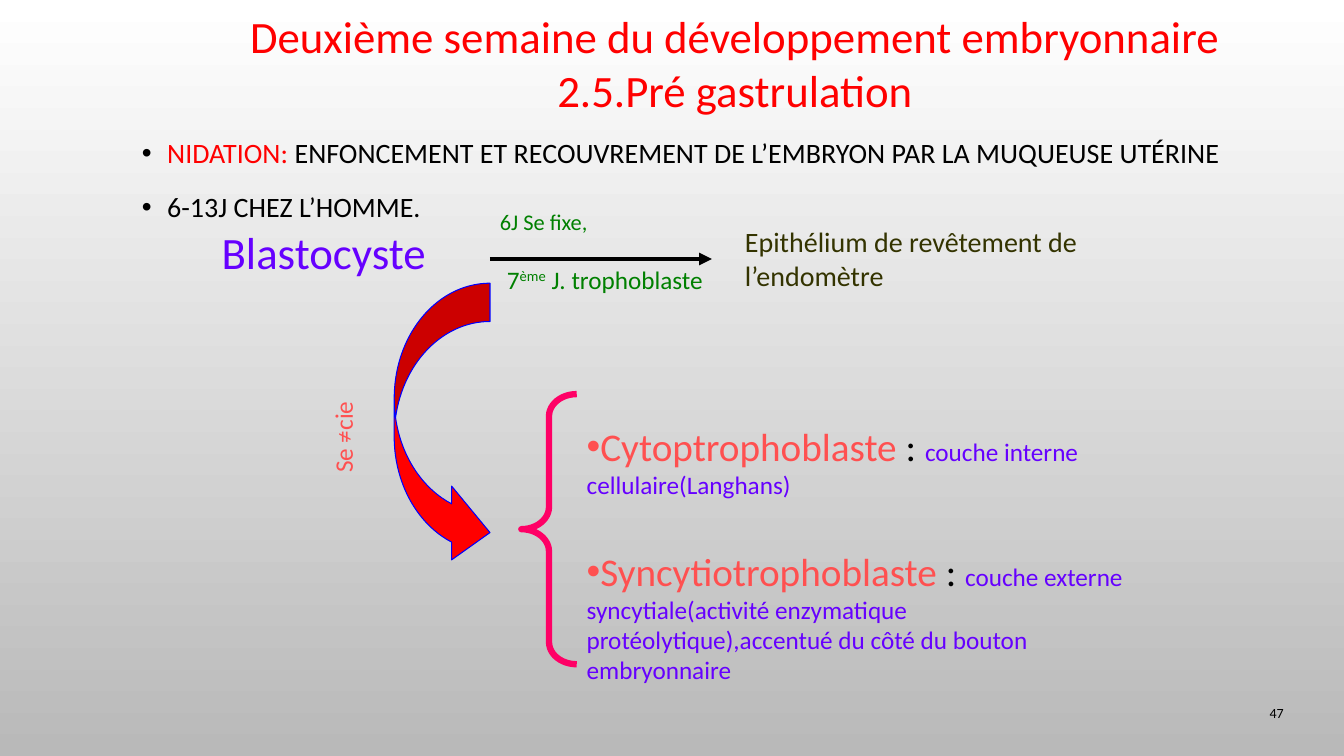
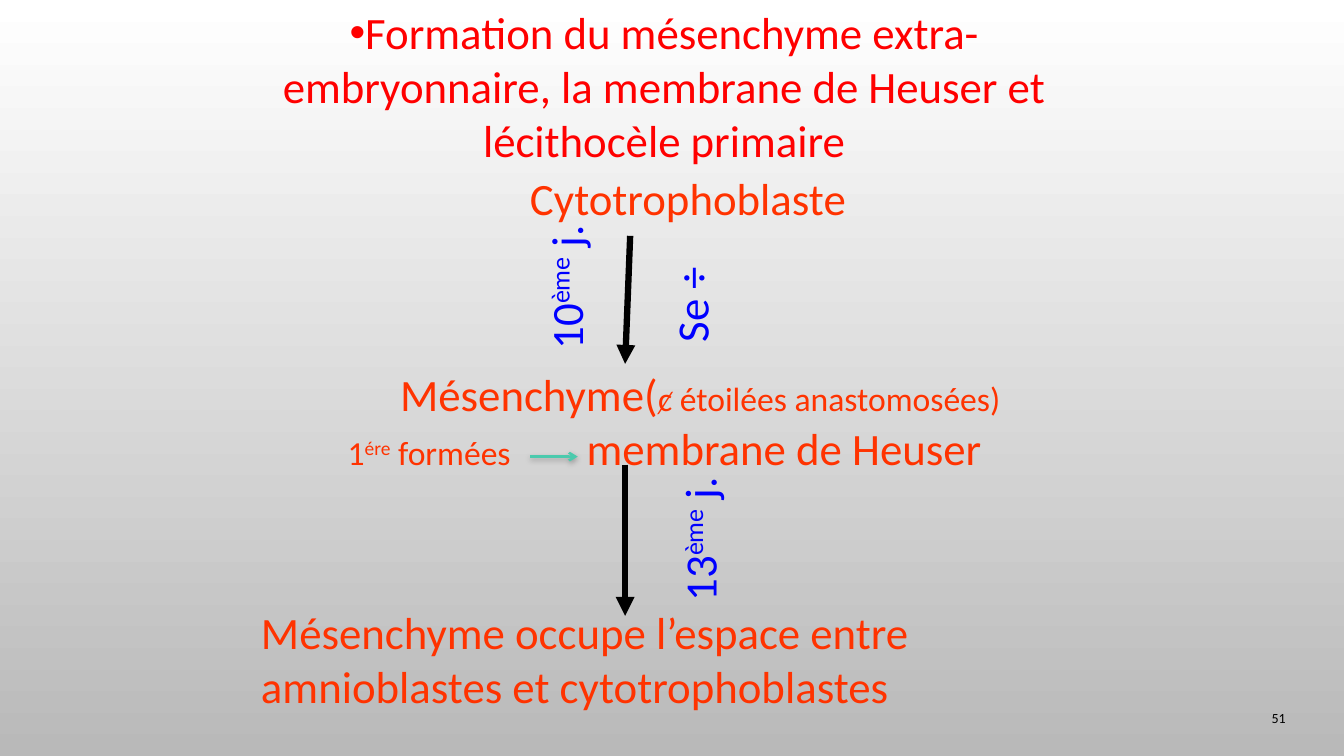
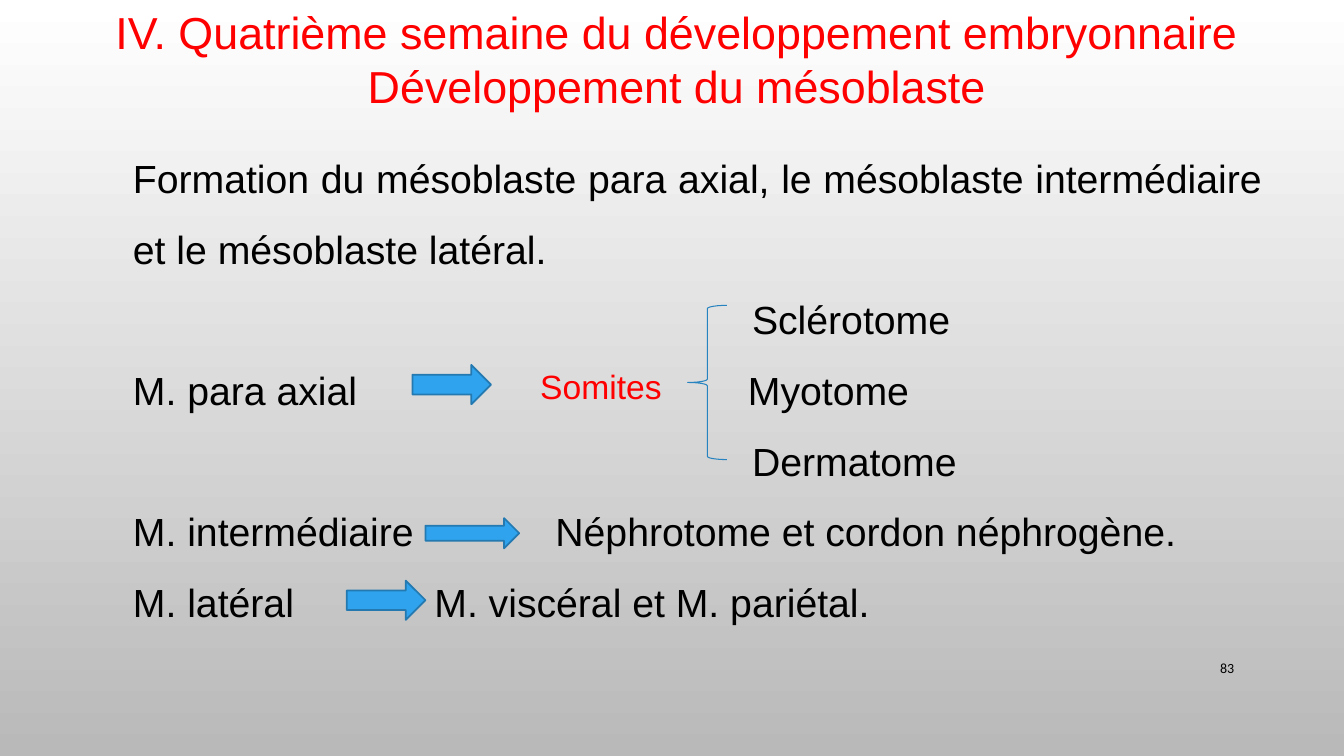
"""Build three slides on early embryonic development."""
from lxml.etree import SubElement
from pptx import Presentation
from pptx.dml.color import RGBColor
from pptx.enum.shapes import MSO_CONNECTOR, MSO_SHAPE as SHAPE
from pptx.enum.text import MSO_ANCHOR as ANCHOR, PP_ALIGN as ALIGN
from pptx.oxml.ns import qn
from pptx.util import Inches, Pt

COLORS = {
    "white": "FFFFFF", "gray": "B9B9B9", "black": "000000", "red": "FF0000",
    "violet": "6600FF", "green": "008000", "olive": "333300", "coral": "FF5050",
    "orange": "FF3300", "blue": "0000FF", "pink": "FF0066", "teal": "4BCAAD",
    "sky": "2FA3EE", "steel": "2379B0", "brace": "2683BF",
}
TITLE = (32, "red")
FLOW = (32, "orange")
FLOW_SMALL = (24, "orange")
DAY = (32, "blue")
TROPHO = (18, "green")
LAYER = (28, "coral")
LAYER_NOTE = (18, "violet")
BODY = (28, "black")
SUPER = 30000

NIDATION = [
    [("NIDATION: ", 20, "red"),
     ("ENFONCEMENT ET RECOUVREMENT DE L’EMBRYON PAR LA MUQUEUSE UTÉRINE", 20, "black")],
    [("6-13J CHEZ L’HOMME.", 20, "black")],
]
LAYERS = [
    [("Cytoptrophoblaste", *LAYER), (" : ", *BODY),
     ("couche interne cellulaire(Langhans)", *LAYER_NOTE)],
    [("Syncytiotrophoblaste", *LAYER), (" : ", *BODY),
     ("couche externe", *LAYER_NOTE), (" ", 28, "violet"),
     ("syncytiale(activité enzymatique protéolytique),accentué du côté du bouton embryonnaire",
      *LAYER_NOTE)],
]
MESENCHYME = [
    ([("\tMésenchyme(", *FLOW), ("ȼ étoilées anastomosées)", *FLOW_SMALL)], [1.34]),
    ([("\t1", *FLOW_SMALL), ("ére", *FLOW_SMALL, SUPER), (" formées", *FLOW_SMALL),
      ("\tmembrane de Heuser", *FLOW)], [0.82, 3.19]),
]
MESOBLAST_INTRO = ("Formation du mésoblaste para axial, le mésoblaste intermédiaire "
                   "et le mésoblaste latéral.")
MESOBLAST_ROWS = [
    ("", "Sclérotome", 6.14),
    ("M. para axial", "Myotome", 6.1),
    ("", "Dermatome", 6.14),
    ("M. intermédiaire", "Néphrotome et cordon néphrogène.", 4.19),
    ("M. latéral", "M. viscéral et M. pariétal.", 2.99),
]
DAYS = [
    ((5.63, 2.52, 2.44, 1), [("Se ÷", *DAY)]),
    ((4.79, 2.35, 1.63, 1), [("10", *DAY), ("ème", *DAY, SUPER), (" j.", *DAY)]),
    ((6.11, 4.85, 1.64, 1), [("13", *DAY), ("ème", *DAY, SUPER), (" j.", *DAY)]),
]
BLOCK_ARROWS = [(4.09, 3.62, 0.78, 0.39), (4.22, 5.14, 0.93, 0.3), (3.44, 5.76, 0.78, 0.39)]


def rgb(name):
    return RGBColor.from_string(COLORS[name])


def inches(values):
    return [Inches(v) for v in values]


def add_text(s, at, paras, font="Calibri", align=ALIGN.LEFT, anchor=ANCHOR.TOP,
             wrap=True, rotation=0):
    tb = s.shapes.add_textbox(*inches(at))
    tb.rotation = rotation
    tf = tb.text_frame
    tf.word_wrap = wrap
    tf.vertical_anchor = anchor
    for i, runs in enumerate(paras):
        p = tf.paragraphs[0] if i == 0 else tf.add_paragraph()
        p.alignment = align
        for text, size, color, *baseline in runs:
            r = p.add_run()
            r.text = text
            r.font.size, r.font.name = Pt(size), font
            r.font.color.rgb = rgb(color)
            if baseline:
                r._r.get_or_add_rPr().set("baseline", str(baseline[0]))
    return tf


def add_bullet(p, indent=0, color=None):
    pPr = p._p.get_or_add_pPr()
    pPr.set("marL", str(Inches(indent)))
    pPr.set("indent", str(-Inches(indent)))
    if color:
        SubElement(SubElement(pPr, qn("a:buClr")), qn("a:srgbClr"), val=COLORS[color])
    SubElement(pPr, qn("a:buFont"), typeface="Arial")
    SubElement(pPr, qn("a:buChar"), char="•")


def add_tabs(p, stops):
    tabs = SubElement(p._p.get_or_add_pPr(), qn("a:tabLst"))
    for stop in stops:
        SubElement(tabs, qn("a:tab"), pos=str(Inches(stop)), algn="l")


def add_arrow(s, start, end, color, width, head="triangle", shadow=False):
    line = s.shapes.add_connector(MSO_CONNECTOR.STRAIGHT, *inches(start + end))
    line.line.color.rgb = rgb(color)
    line.line.width = Pt(width)
    SubElement(line.line._get_or_add_ln(), qn("a:tailEnd"), type=head)
    effects = SubElement(line._element.spPr, qn("a:effectLst"))
    if shadow:
        outer = SubElement(effects, qn("a:outerShdw"), blurRad=str(Pt(4)), dist=str(Pt(2)),
                           dir="5400000", rotWithShape="0")
        tint = SubElement(outer, qn("a:srgbClr"), val=COLORS["black"])
        SubElement(tint, qn("a:alpha"), val="28000")


def add_figure(s, kind, at, line, width, fill=None, adjustments=()):
    sp = s.shapes.add_shape(kind, *inches(at))
    sp.shadow.inherit = False
    for i, value in enumerate(adjustments):
        sp.adjustments[i] = value
    if fill:
        sp.fill.solid()
        sp.fill.fore_color.rgb = rgb(fill)
    else:
        sp.fill.background()
    sp.line.color.rgb = rgb(line)
    sp.line.width = Pt(width)


def add_title(s, at, lines, font="Calibri"):
    return add_text(s, at, [[(line, *TITLE)] for line in lines], font, ALIGN.CENTER)


def add_slide(prs, number, left, top):
    s = prs.slides.add_slide(prs.slide_layouts[6])
    add_text(s, (left, top, 0.84, 0.4), [[(number, 10, "black")]],
             align=ALIGN.RIGHT, anchor=ANCHOR.MIDDLE)
    return s


def set_background(master):
    fill = master.background.fill
    fill.gradient()
    fill.gradient_angle = 270
    for stop, color in zip(fill.gradient_stops, ("white", "gray")):
        stop.color.rgb = rgb(color)


def build_nidation(prs):
    s = add_slide(prs, "47", 11.99, 6.87)
    add_title(s, (1.5, 0.04, 11.58, 1.18),
              ["Deuxième semaine du développement embryonnaire", "2.5.Pré gastrulation"])
    tf = add_text(s, (1.31, 1.23, 11.19, 1.1), NIDATION)
    for p in tf.paragraphs:
        p.line_spacing = 1.2
        add_bullet(p, 0.25, "black")
    tf.paragraphs[1].space_before = Pt(10)

    add_text(s, (2.1, 2.18, 2.68, 0.63), [[("Blastocyste", 32, "violet")]])
    add_arrow(s, (4.86, 2.57), (7.06, 2.57), "black", 3)
    add_text(s, (4.86, 2.02, 2.05, 0.37), [[("6J Se fixe,", 16, "green")]])
    add_text(s, (4.93, 2.57, 2.2, 0.4),
             [[("7", *TROPHO), ("ème", *TROPHO, SUPER), (" J. trophoblaste", *TROPHO)]])
    add_text(s, (7.29, 2.18, 3.67, 0.77),
             [[("Epithélium de revêtement de l’endomètre", 20, "olive")]])
    add_figure(s, SHAPE.CURVED_RIGHT_ARROW, (3.91, 2.81, 0.95, 2.84), "blue", 0.75, "red",
               (0.4, 0.77, 0.4))
    add_text(s, (2.8, 3.99, 1.2, 0.4), [[("Se ≠cie", 18, "coral")]], rotation=270)
    add_figure(s, SHAPE.LEFT_BRACE, (5.17, 3.91, 0.55, 2.68), "pink", 4.5,
               adjustments=(0.4, 0.5))
    tf = add_text(s, (5.72, 4.14, 5.71, 2.73), LAYERS)
    tf.paragraphs[1].space_before = Pt(34)
    for p in tf.paragraphs:
        add_bullet(p)


def build_mesenchyme(prs):
    s = add_slide(prs, "51", 12.01, 6.92)
    tf = add_title(s, (2.06, 0, 9.06, 1.72),
                   ["Formation du mésenchyme extra-embryonnaire, la membrane de Heuser "
                    "et lécithocèle primaire"])
    add_bullet(tf.paragraphs[0])
    add_text(s, (3.31, 1.64, 7.03, 0.63), [[("Cytotrophoblaste", *FLOW)]], align=ALIGN.CENTER)
    tf = add_text(s, (2.53, 3.59, 7.53, 1.72), [runs for runs, _ in MESENCHYME])
    for p, (_, stops) in zip(tf.paragraphs, MESENCHYME):
        add_tabs(p, stops)
    add_text(s, (2.49, 5.95, 8.68, 1.17),
             [[("Mésenchyme occupe l’espace entre amnioblastes et cytotrophoblastes", *FLOW)]])
    for at, runs in DAYS:
        add_text(s, at, [runs], align=ALIGN.CENTER, anchor=ANCHOR.MIDDLE, wrap=False,
                 rotation=270)
    add_arrow(s, (6.25, 2.34), (6.2, 3.61), "black", 4.5)
    add_arrow(s, (6.2, 4.61), (6.2, 6.11), "black", 4.5)
    add_arrow(s, (5.26, 4.53), (5.73, 4.53), "teal", 1.75, "arrow", shadow=True)


def build_mesoblast(prs):
    s = add_slide(prs, "83", 11.5, 6.43)
    add_title(s, (0.65, 0, 12.13, 1.18),
              ["IV. Quatrième semaine du développement embryonnaire",
               "Développement du mésoblaste"], "Arial")
    rows = [[(f"{source}\t{result}", *BODY)] for source, result, _ in MESOBLAST_ROWS]
    tf = add_text(s, (1.22, 1.25, 11.39, 5.52), [[(MESOBLAST_INTRO, *BODY)]] + rows, "Arial")
    for p in tf.paragraphs:
        p.line_spacing = 1.5
    tf.paragraphs[0].alignment = ALIGN.JUSTIFY
    for p, (_, _, stop) in zip(tf.paragraphs[1:], MESOBLAST_ROWS):
        add_tabs(p, [stop])
    for at in BLOCK_ARROWS:
        add_figure(s, SHAPE.RIGHT_ARROW, at, "steel", 1.25, "sky")
    add_figure(s, SHAPE.LEFT_BRACE, (6.82, 3.03, 0.39, 1.53), "brace", 0.75)
    add_text(s, (5.26, 3.58, 1.56, 0.51), [[("Somites", 24, "red")]], "Arial")


def main():
    prs = Presentation()
    prs.slide_width, prs.slide_height = inches((13.33, 7.5))
    set_background(prs.slide_master)
    for build in (build_nidation, build_mesenchyme, build_mesoblast):
        build(prs)
    prs.save("out.pptx")


if __name__ == "__main__":
    main()
